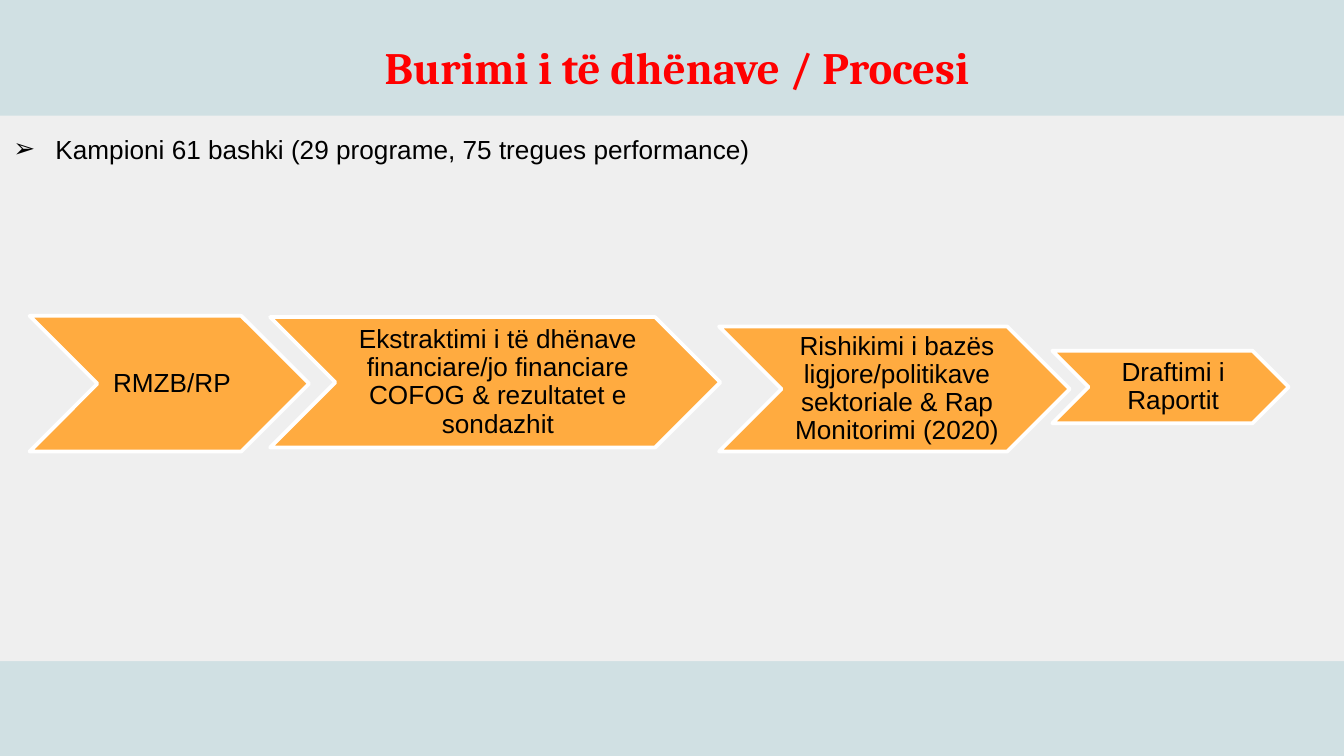
import pptx
import pptx.dml.color
import pptx.enum.shapes
import pptx.enum.text
import pptx.oxml.ns
import pptx.util
from lxml import etree

Pt = pptx.util.Pt
RGB = pptx.dml.color.RGBColor
Kind = pptx.enum.shapes.MSO_SHAPE
Align = pptx.enum.text.PP_ALIGN
Anchor = pptx.enum.text.MSO_ANCHOR
Fit = pptx.enum.text.MSO_AUTO_SIZE

SKY = RGB(0xD0, 0xE0, 0xE3)
GREY = RGB(0xEF, 0xEF, 0xEF)
ORANGE = RGB(0xFF, 0xAB, 0x40)
WHITE = RGB(0xFF, 0xFF, 0xFF)
BLACK = RGB(0, 0, 0)
RED = RGB(0xFF, 0, 0)

HEAD = {"name": "Cambria", "size": Pt(24), "bold": True}
PLAIN = {"name": "Arial", "size": Pt(14), "bold": False}
FRAME = {"word_wrap": True, "auto_size": Fit.NONE}

STEPS = [
    ("RMZB/RP", (15.84, 169.2, 149.76, 72.72)),
    ("Ekstraktimi i të dhënave financiare/jo financiare COFOG & rezultatet e sondazhit",
     (144.72, 169.92, 241.2, 69.84)),
    ("Rishikimi i bazës ligjore/politikave sektoriale & Rap Monitorimi (2020)",
     (385.2, 174.96, 187.92, 66.96)),
    ("Draftimi i Raportit", (563.76, 187.92, 126.72, 38.88)),
]


def apply(item, values):
    for name, value in values.items():
        setattr(item, name, value)


def place(shape, box):
    names = ("left", "top", "width", "height")
    apply(shape, dict(zip(names, map(Pt, box))))


def write(shape, text, font, color, align, anchor, pads, gap=1.0):
    frame = shape.text_frame
    sides = ("margin_left", "margin_top", "margin_right", "margin_bottom")
    apply(frame, FRAME | {"vertical_anchor": anchor})
    apply(frame, dict(zip(sides, map(Pt, pads))))
    para = frame.paragraphs[0]
    apply(para, {"alignment": align, "line_spacing": gap, "space_before": Pt(0)})
    run = para.add_run()
    run.text = text
    apply(run.font, font)
    run.font.color.rgb = color
    return para


def bullet(para, mark, indent):
    props = para._p.get_or_add_pPr()
    props.set("marL", str(Pt(indent)))
    props.set("indent", str(-Pt(indent)))
    etree.SubElement(props, pptx.oxml.ns.qn("a:buChar")).set("char", mark)


def draw(slide, kind, box, fill):
    shape = slide.shapes.add_shape(kind, *map(Pt, box))
    shape.shadow.inherit = False
    shape.fill.solid()
    shape.fill.fore_color.rgb = fill
    shape.line.fill.background()
    return shape


def band(slide):
    shape = draw(slide, Kind.RECTANGLE, (0, 62, 720, 292.25), GREY)
    slide.shapes._spTree.insert(2, shape._element)


def step(slide, text, box):
    shape = draw(slide, Kind.CHEVRON, box, ORANGE)
    shape.line.color.rgb = WHITE
    shape.line.width = Pt(2)
    write(shape, text, PLAIN, BLACK, Align.CENTER, Anchor.MIDDLE,
          (4.32, 1.44, 1.44, 1.44), 0.9)


def main():
    deck = pptx.Presentation()
    apply(deck, {"slide_width": Pt(720), "slide_height": Pt(405)})
    slide = deck.slides.add_slide(deck.slide_layouts[1])
    slide.background.fill.solid()
    slide.background.fill.fore_color.rgb = SKY
    band(slide)

    title, body = slide.placeholders
    place(title, (13.68, 12.24, 697.68, 46.8))
    write(title, "Burimi i të dhënave / Procesi", HEAD, RED,
          Align.CENTER, Anchor.MIDDLE, [7.2] * 4)
    place(body, (0, 64, 720, 300.25))
    para = write(body, "Kampioni 61 bashki (29 programe, 75 tregues performance)",
                 PLAIN, BLACK, Align.LEFT, Anchor.TOP, [7.2] * 4)
    bullet(para, "➢", 22.5)

    for text, box in STEPS:
        step(slide, text, box)
    deck.save("out.pptx")


if __name__ == "__main__":
    main()
